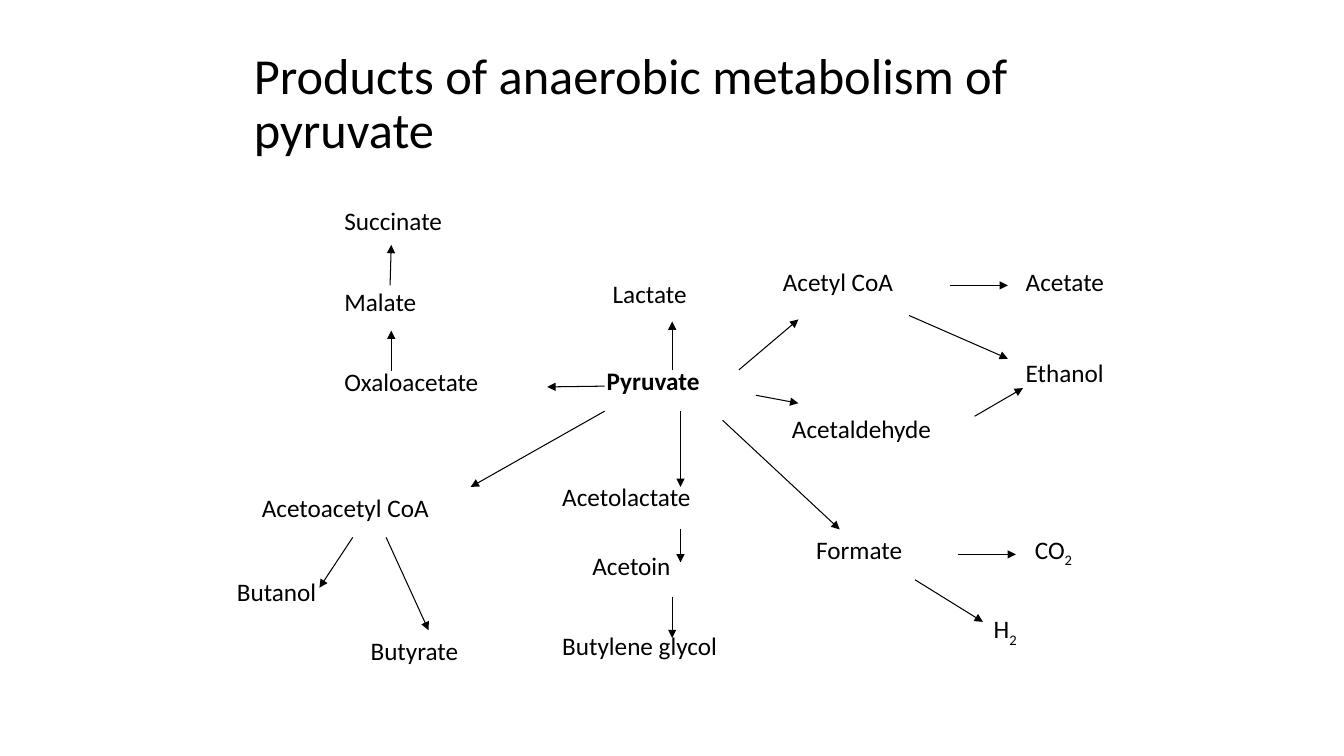
from lxml.etree import SubElement
from pptx import Presentation
from pptx.dml.color import RGBColor
from pptx.enum.shapes import MSO_CONNECTOR as Connector
from pptx.enum.text import MSO_ANCHOR as Anchor, MSO_AUTO_SIZE as AutoSize
from pptx.oxml.ns import qn
from pptx.util import Cm, Pt

BLACK = "000000"
LABEL_HEIGHT = 1.02

# Each pathway: origin (left, top), labels (text, x, y, width),
# arrows (x1, y1, x2, y2); all in cm, relative to the origin
PATHWAYS = {
    "lactate": ((15.04, 6.88),
        [("Pyruvate", 0, 2.21, 2.87), ("Lactate", 0.15, 0, 2.39)],
        [(1.9, 2.44, 1.9, 1.22)]),
    "succinate": ((8.43, 5.05),
        [("Succinate", 0, 0, 3), ("Malate", 0, 2.03, 2.34),
         ("Oxaloacetate", 0, 4.06, 3.91)],
        [(6.81, 4.68, 5.36, 4.7), (1.43, 4.3, 1.43, 3.28),
         (1.4, 2.14, 1.43, 1.12)]),
    "acetate and ethanol": ((19.48, 6.58),
        [("Acetyl CoA", 0, 0, 3.33), ("Acetate", 6.12, 0, 2.51),
         ("Ethanol", 6.12, 2.31, 2.49), ("Acetaldehyde", 0.23, 3.71, 4.22)],
        [(-0.86, 2.74, 0.64, 1.47), (-0.43, 3.38, 0.64, 3.58),
         (4.45, 0.61, 5.92, 0.61), (5.08, 3.91, 6.3, 3.2),
         (3.43, 1.37, 5.92, 2.46)]),
    "formate": ((20.32, 13.34),
        [("Formate", 0, 0, 2.69), ("CO_2", 5.51, 0, 1.5),
         ("H_2", 4.47, 2, 1.14)],
        [(-2.11, -2.75, 0.84, 0), (3.81, 0.63, 5.28, 0.63),
         (2.74, 1.27, 4.45, 2.33)]),
    "butylene glycol": ((13.92, 12.01),
        [("Acetolactate", 0, 0, 3.78), ("Acetoin", 0.76, 1.73, 2.51),
         ("Butylene glycol", 0, 3.76, 4.47)],
        [(3.23, -1.65, 3.23, 0.26), (3.23, 1.33, 3.23, 2.16),
         (3.02, 3.03, 3.02, 4.07)]),
    "butanol and butyrate": ((5.72, 12.27),
        [("Acetoacetyl CoA", 0.63, 0, 4.75), ("Butanol", 0, 2.13, 2.54),
         ("Butyrate", 3.37, 3.61, 2.74)],
        [(9.52, -1.91, 6.14, 0), (3.17, 1.27, 2.33, 2.54),
         (4.01, 1.27, 5.08, 3.61)]),
}


def color(hex_string):
    return RGBColor.from_string(hex_string)


def style_font(paragraph, size, bold=False):
    font = paragraph.font
    font.name, font.size, font.bold = "Calibri", Pt(size), bold
    font.color.rgb = color(BLACK)


def add_title(slide, left, top, width, height):
    shape = slide.shapes.add_textbox(Cm(left), Cm(top), Cm(width), Cm(height))
    frame = shape.text_frame
    frame.word_wrap = True
    frame.vertical_anchor = Anchor.MIDDLE
    paragraph = frame.paragraphs[0]
    paragraph.text = "Products of anaerobic metabolism of pyruvate"
    paragraph.line_spacing = 0.9
    style_font(paragraph, 36)


def add_label(slide, text, left, top, width):
    shape = slide.shapes.add_textbox(Cm(left), Cm(top), Cm(width), Cm(LABEL_HEIGHT))
    frame = shape.text_frame
    frame.word_wrap = False
    frame.auto_size = AutoSize.SHAPE_TO_FIT_TEXT
    paragraph = frame.paragraphs[0]
    style_font(paragraph, 18, bold=text == "Pyruvate")
    # An underscore marks the start of a subscript
    base, _, subscript = text.partition("_")
    paragraph.add_run().text = base
    if subscript:
        run = paragraph.add_run()
        run.text = subscript
        run.font._element.set("baseline", "-25000")


def add_arrow(slide, x1, y1, x2, y2):
    arrow = slide.shapes.add_connector(
        Connector.STRAIGHT, Cm(x1), Cm(y1), Cm(x2), Cm(y2))
    arrow.line.color.rgb = color(BLACK)
    arrow.line.width = Pt(0.75)
    SubElement(arrow.line._get_or_add_ln(), qn("a:tailEnd"), type="triangle")
    SubElement(arrow._element.spPr, qn("a:effectLst"))


def add_pathway(slide, left, top, labels, arrows):
    for text, x, y, width in labels:
        add_label(slide, text, left + x, top + y, width)
    for x1, y1, x2, y2 in arrows:
        add_arrow(slide, left + x1, top + y1, left + x2, top + y2)


def main():
    presentation = Presentation()
    presentation.slide_width, presentation.slide_height = Cm(33.87), Cm(19.05)
    slide = presentation.slides.add_slide(presentation.slide_layouts[6])
    add_title(slide, 6.15, 1.7, 21.59, 1.9)
    for (left, top), labels, arrows in PATHWAYS.values():
        add_pathway(slide, left, top, labels, arrows)
    presentation.save("out.pptx")


if __name__ == "__main__":
    main()
